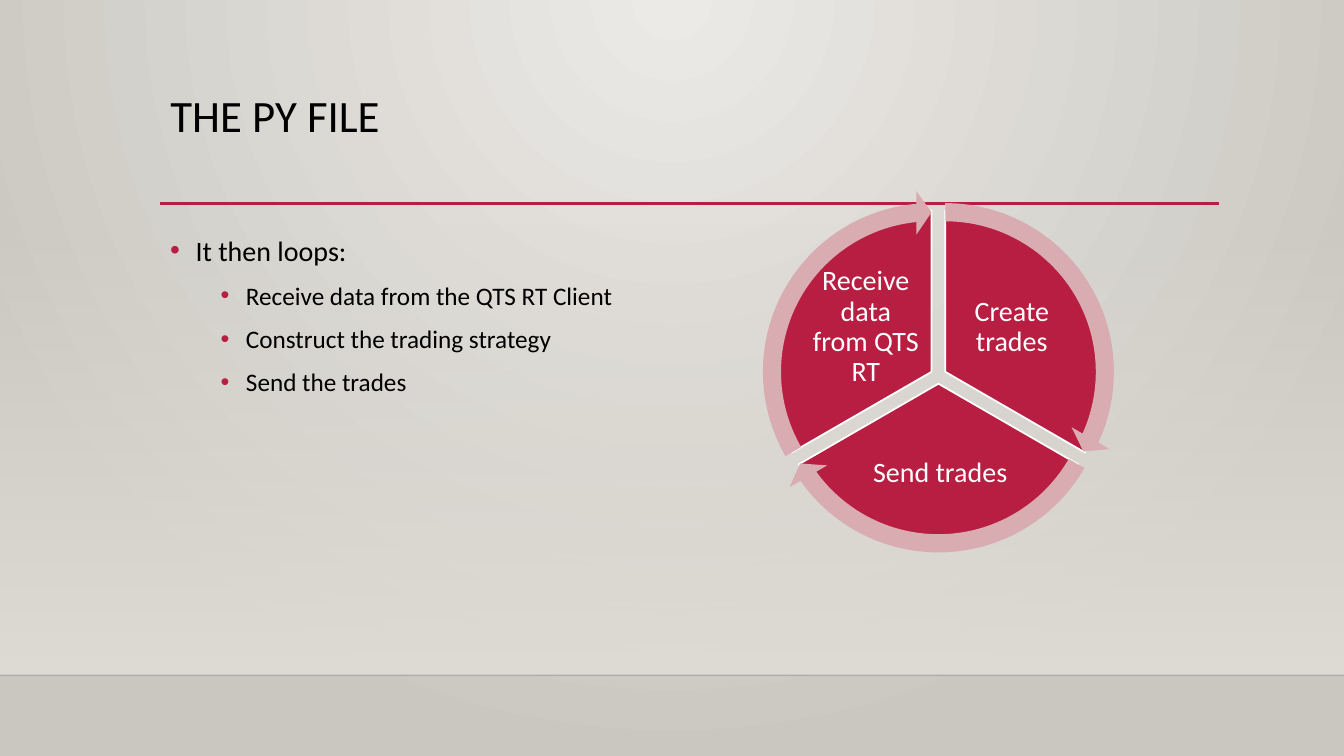
from math import cos, radians, sin

from lxml import etree
from pptx import Presentation
from pptx.dml.color import RGBColor
from pptx.enum.shapes import MSO_CONNECTOR, MSO_SHAPE
from pptx.enum.text import MSO_ANCHOR, PP_ALIGN
from pptx.oxml.ns import qn
from pptx.util import Cm, Pt

RECT, PIE, ARROW = MSO_SHAPE.RECTANGLE, MSO_SHAPE.PIE, MSO_SHAPE.CIRCULAR_ARROW
TOP, MIDDLE = MSO_ANCHOR.TOP, MSO_ANCHOR.MIDDLE
LEFT, CENTER = PP_ALIGN.LEFT, PP_ALIGN.CENTER

TITLE = "THE PY FILE"
BULLETS = [  # text, level
    ("It then loops:", 0),
    ("Receive data from the QTS RT Client", 1),
    ("Construct the trading strategy", 1),
    ("Send the trades", 1),
]
LEVELS = [  # size, space before, left margin in cm
    (20, 0, 0.64),
    (18, 5, 1.91),
]
CYCLE = [  # label, label box in cm
    ("Create trades", (24.05, 7.04, 2.9, 2.41)),
    ("Send trades", (21.51, 10.87, 4.37, 2.13)),
    ("Receive data from QTS RT", (20.37, 7.04, 2.9, 2.41)),
]

FONT = "Calibri"
RED, PINK, WHITE, BLACK = "B71E42", "D8ACB0", "FFFFFF", "000000"
WIDTH, HEIGHT = 33.87, 19.05
FLOOR = 17.02
HUB_X, HUB_Y, GAP = 23.65, 9.47, 0.2
PIE_SIZE, ARROW_SIZE = 8.13, 9.14
TURN, THIRD = 216, 72  # angles in the unit of the shape adjustments


def rgb(value):
    return RGBColor.from_string(value)


def cm(*lengths):
    return [Cm(v) for v in lengths]


def sub(parent, tag, **attrs):
    return etree.SubElement(parent, qn(tag), attrs)


def set_gradient(fill, colors):
    fill.gradient()
    for stop, color in zip(fill.gradient_stops, colors):
        stop.color.rgb = rgb(color)


def format_text(p, text, size, color, **para):
    r = p.add_run()
    r.text = text
    for name, value in dict(name=FONT, size=Pt(size)).items():
        setattr(r.font, name, value)
    r.font.color.rgb = rgb(color)
    for name, value in para.items():
        setattr(p, name, value)


def add_bullet(p, margin):
    pPr = p._p.get_or_add_pPr()
    pPr.set("marL", str(Cm(margin)))
    pPr.set("indent", str(-Cm(0.64)))
    sub(sub(pPr, "a:buClr"), "a:srgbClr", val=RED)
    sub(pPr, "a:buFont", typeface="Arial")
    sub(pPr, "a:buChar", char="•")


def add_rule(shapes, x1, x2, y, color, width):
    line = shapes.add_connector(MSO_CONNECTOR.STRAIGHT, *cm(x1, y, x2, y))
    line.line.color.rgb = rgb(color)
    line.line.width = Pt(width)
    sub(line._element.spPr, "a:effectLst")
    return line


def add_round(shapes, kind, size, position, adjustments, color):
    """Add a round shape moved outward from the hub towards its third."""
    angle = radians(120 * position - 30)
    x = HUB_X + GAP * cos(angle) - size / 2
    y = HUB_Y + GAP * sin(angle) - size / 2
    sp = shapes.add_shape(kind, *cm(x, y, size, size))
    sp.shadow.inherit = False
    sp.fill.solid()
    sp.fill.fore_color.rgb = rgb(color)
    sp.line.fill.background()
    for i, value in enumerate(adjustments):
        sp.adjustments[i] = value
    return sp


prs = Presentation()
prs.slide_width, prs.slide_height = cm(WIDTH, HEIGHT)
s = prs.slides.add_slide(prs.slide_layouts[5])

# Background, floor and rules
set_gradient(s.background.fill, ["ECEAE7", "CAC7C1"])
grad = s.element.xpath(".//p:bgPr/a:gradFill")[0]
grad.remove(grad.find(qn("a:lin")))
glow = sub(grad, "a:path", path="circle")
sub(glow, "a:fillToRect", l="43000", t="0", r="43000", b="100000")

wall = s.shapes.add_shape(RECT, *cm(0, 5.61, WIDTH, FLOOR - 5.61))
wall.shadow.inherit = False
wall.line.fill.background()
set_gradient(wall.fill, ["DFDBD5", "DFDBD5"])
wall.fill.gradient_angle = 270
sub(wall._element.xpath(".//a:gs/a:srgbClr")[0], "a:alpha", val="0")

edge = add_rule(s.shapes, 0, WIDTH, FLOOR, "000001", 1)
sub(edge._element.xpath(".//a:ln//a:srgbClr")[0], "a:alpha", val="20000")
add_rule(s.shapes, 4.04, 30.73, 5.13, RED, 2.5)

# Title and bullets
title = s.shapes.title
title.left, title.top, title.width, title.height = cm(4.04, 2.24, 26.67, 2.91)
title.text_frame.vertical_anchor = TOP
format_text(title.text_frame.paragraphs[0], TITLE, 32, BLACK,
            alignment=LEFT, line_spacing=0.9)

tf = s.shapes.add_textbox(*cm(4.04, 5.59, 26.67, 9.58)).text_frame
tf.word_wrap = True
for i, (text, level) in enumerate(BULLETS):
    size, before, margin = LEVELS[level]
    p = tf.add_paragraph() if i else tf.paragraphs[0]
    add_bullet(p, margin)
    format_text(p, text, size, BLACK, level=level, line_spacing=1.2,
                space_before=Pt(before))

# Cycle: three slices with labels, then the arrows around them
cycle = s.shapes.add_group_shape().shapes
starts = [(162 + THIRD * i) % TURN for i in range(len(CYCLE))]
for i, (label, box) in enumerate(CYCLE):
    end = (starts[i] + THIRD) % TURN
    pie = add_round(cycle, PIE, PIE_SIZE, i, (starts[i], end), RED)
    pie.line.color.rgb = rgb(WHITE)
    pie.line.width = Pt(1.25)
    tf = cycle.add_textbox(*cm(*box)).text_frame
    tf.word_wrap = True
    tf.vertical_anchor = MIDDLE
    for side in ("left", "top", "right", "bottom"):
        setattr(tf, f"margin_{side}", Cm(0.08))
    format_text(tf.paragraphs[0], label, 20, WHITE,
                alignment=CENTER, line_spacing=0.9)
for i, start in enumerate(starts):
    tip = 14.73 + THIRD * i
    add_round(cycle, ARROW, ARROW_SIZE, i, (0.05, 3.28, tip, start, 0.06), PINK)

prs.save("out.pptx")
